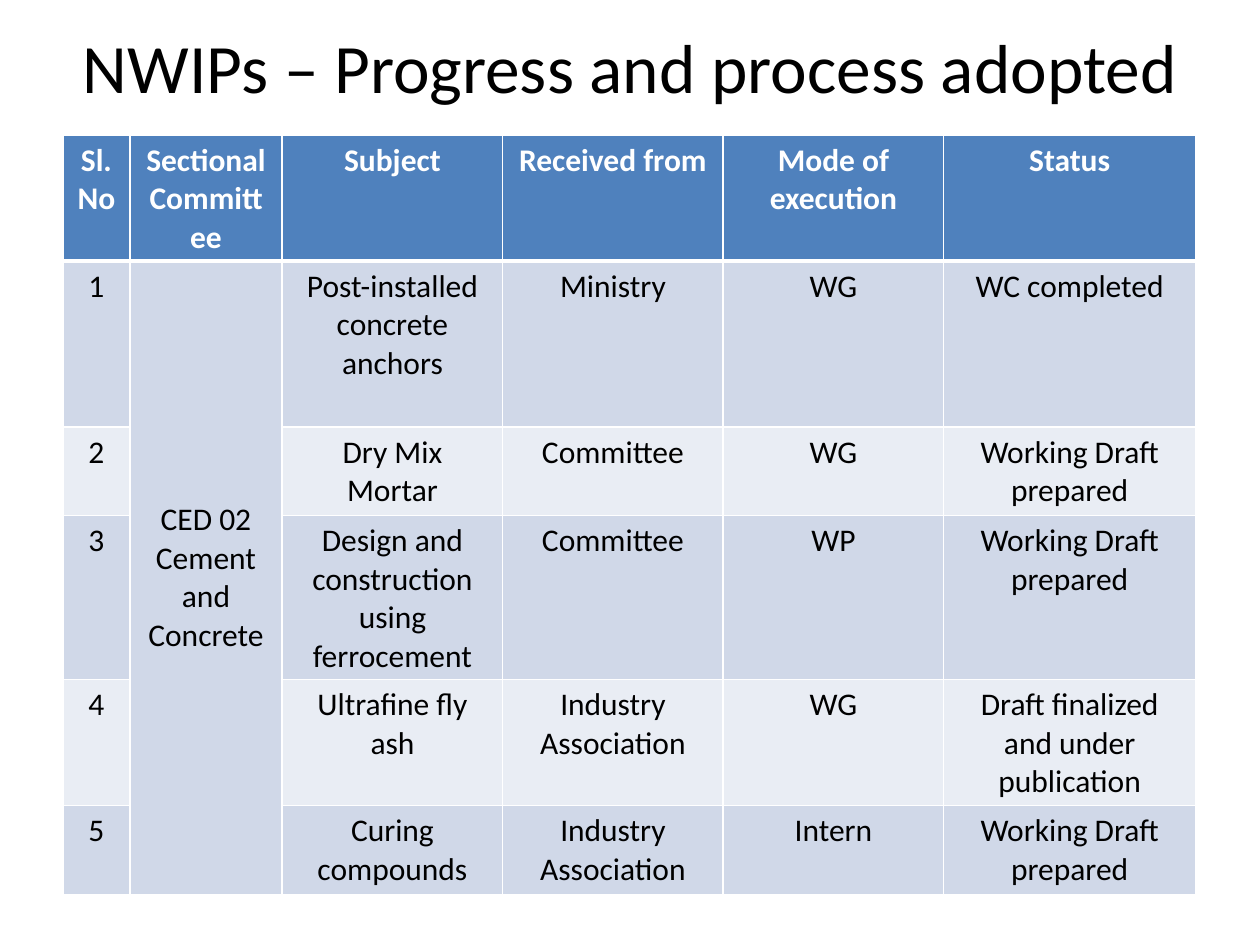
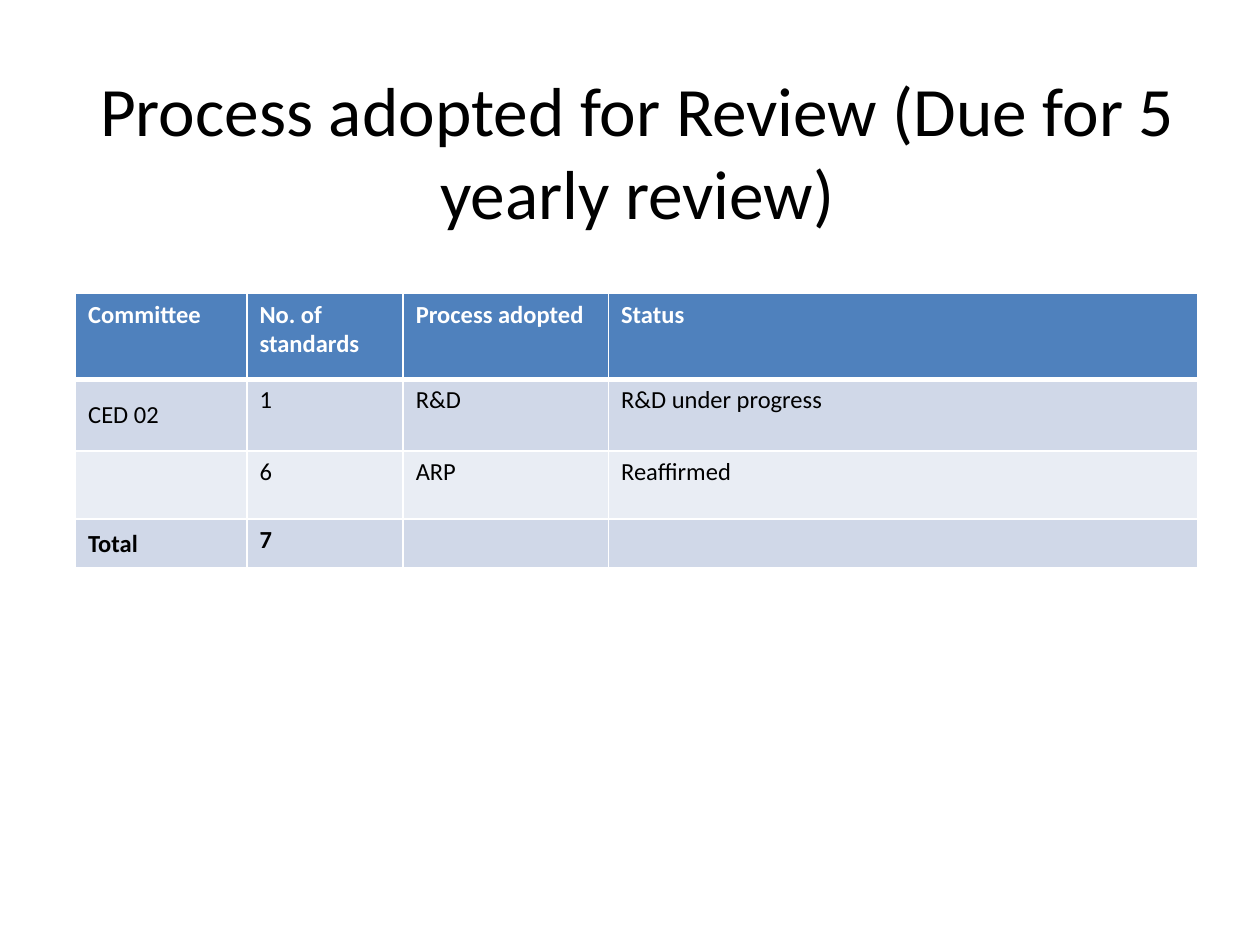
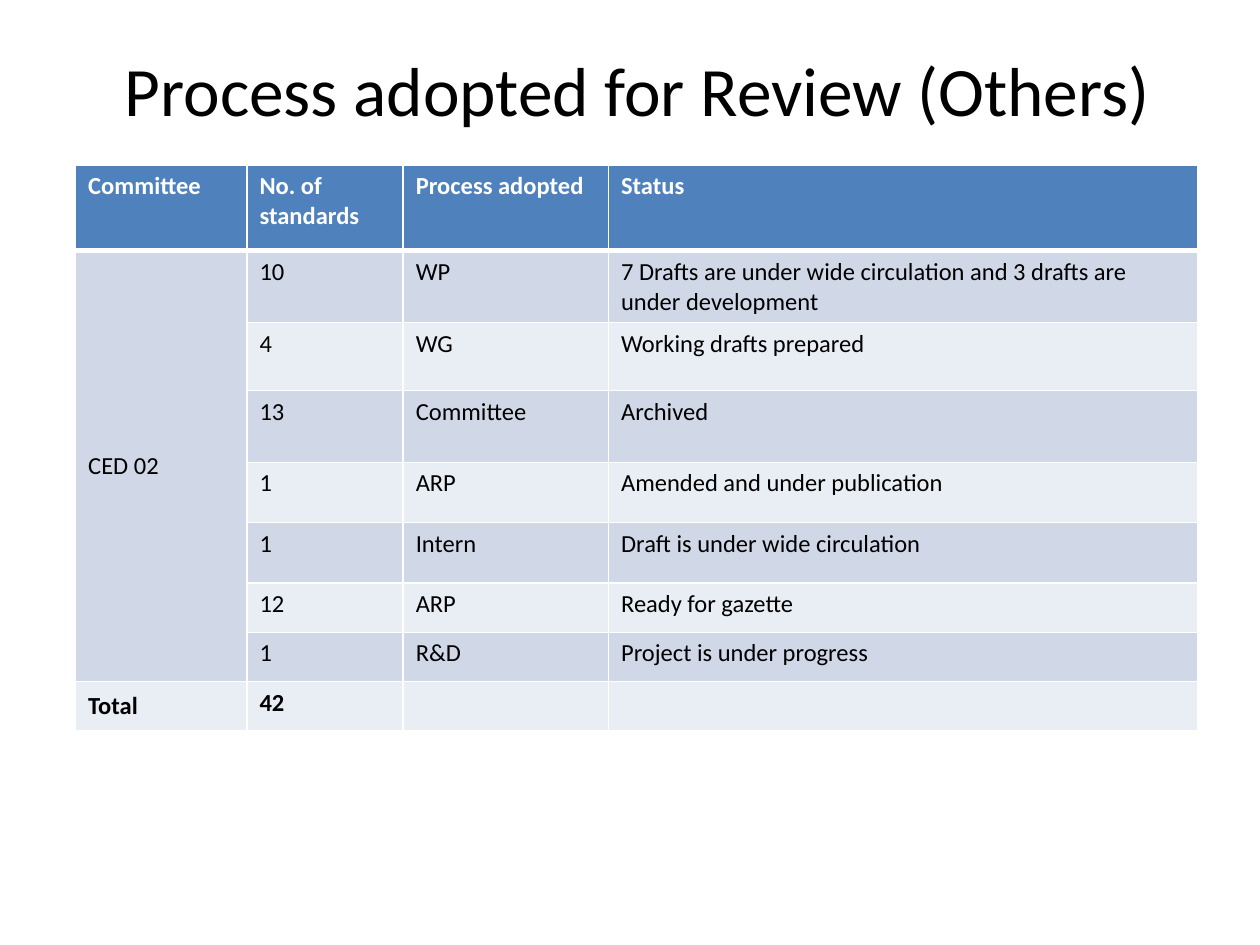
import pptx
import pptx.dml.color
import pptx.enum.text
import pptx.oxml.ns
import pptx.util
from lxml import etree

Inches, Pt = pptx.util.Inches, pptx.util.Pt
RGBColor = pptx.dml.color.RGBColor
PP_ALIGN, MSO_ANCHOR = pptx.enum.text.PP_ALIGN, pptx.enum.text.MSO_ANCHOR
qn = pptx.oxml.ns.qn

BLACK = RGBColor(0x00, 0x00, 0x00)
WHITE = RGBColor(0xFF, 0xFF, 0xFF)
HEADER_BLUE = RGBColor(0x4F, 0x81, 0xBD)
BAND_DARK = RGBColor(0xD0, 0xD8, 0xE8)
BAND_LIGHT = RGBColor(0xE9, 0xED, 0xF4)

REVIEW_HEADER = ["Committee", "No. of standards", "Process adopted", "Status"]
REVIEW_COLS = [1.36, 1.24, 1.63, 4.68]

# None marks a cell merged into the one above it.
NWIP_ROWS = [
    ["Sl. No", "Sectional Committee", "Subject", "Received from", "Mode of execution", "Status"],
    ["1", "CED 02\nCement and Concrete", "Post-installed concrete anchors", "Ministry", "WG",
     "WC completed"],
    ["2", None, "Dry Mix Mortar", "Committee", "WG", "Working Draft prepared"],
    ["3", None, "Design and construction using ferrocement", "Committee", "WP",
     "Working Draft prepared"],
    ["4", None, "Ultrafine fly ash", "Industry Association", "WG",
     "Draft finalized and under publication"],
    ["5", None, "Curing compounds", "Industry Association", "Intern", "Working Draft prepared"],
]
DUE_ROWS = [
    REVIEW_HEADER,
    ["CED 02", "1", "R&D", "R&D under progress"],
    ["", "6", "ARP", "Reaffirmed"],
    ["Total", "7", "", ""],
]
OTHER_ROWS = [
    REVIEW_HEADER,
    ["CED 02", "10", "WP",
     "7 Drafts are under wide circulation and 3 drafts are under development"],
    [None, "4", "WG", "Working drafts prepared"],
    [None, "13", "Committee", "Archived"],
    [None, "1", "ARP", "Amended and under publication"],
    [None, "1", "Intern", "Draft is under wide circulation"],
    [None, "12", "ARP", "Ready for gazette"],
    [None, "1", "R&D", "Project is under progress"],
    ["Total", "42", "", ""],
]


class Deck:
    font = "Calibri"
    title_size = 39.6

    def __init__(self):
        self.prs = pptx.Presentation()
        self.prs.slide_width, self.prs.slide_height = Inches(10), Inches(7.5)
        self.slide = None

    def new_slide(self):
        self.slide = self.prs.slides.add_slide(self.prs.slide_layouts[6])

    def add_text(self, tf, text, size, color=BLACK, bold=False, align=PP_ALIGN.LEFT):
        """Fill a text frame, one paragraph per line of text."""
        for i, line in enumerate(text.split("\n")):
            p = tf.add_paragraph() if i else tf.paragraphs[0]
            p.alignment = align
            if not line:
                etree.SubElement(p._p, qn("a:endParaRPr"), sz=str(size * 100))
                continue
            r = p.add_run()
            r.text = line
            r.font.name, r.font.size, r.font.bold = self.font, Pt(size), bold
            r.font.color.rgb = color

    def title(self, text, left, top, height):
        sp = self.slide.shapes.add_textbox(Inches(left), Inches(top), Inches(9), Inches(height))
        tf = sp.text_frame
        tf.word_wrap = True
        tf.vertical_anchor = MSO_ANCHOR.MIDDLE
        self.add_text(tf, text, self.title_size, align=PP_ALIGN.CENTER)

    def borders(self, cell, **widths):
        """Draw white cell borders; keys are L, R, T, B and widths are points."""
        tc_pr = cell._tc.get_or_add_tcPr()
        for side, width in widths.items():
            ln = etree.SubElement(tc_pr, qn(f"a:ln{side}"), w=str(Pt(width)))
            fill = etree.SubElement(ln, qn("a:solidFill"))
            etree.SubElement(fill, qn("a:srgbClr"), val=str(WHITE))

    def table(self, rows, left, top, cols, heights, size, align=PP_ALIGN.LEFT,
              label_col=0, has_total=False):
        """Add a banded table whose label column is centred vertically."""
        frame = self.slide.shapes.add_table(
            len(rows), len(cols), Inches(left), Inches(top),
            Inches(sum(cols)), Inches(sum(heights)))
        table = frame.table
        for column, width in zip(table.columns, cols):
            column.width = Inches(width)
        for row, height in zip(table.rows, heights):
            row.height = Inches(height)
        for i, texts in enumerate(rows):
            header = i == 0
            fill = HEADER_BLUE if header else BAND_DARK if i % 2 else BAND_LIGHT
            bold = header or (has_total and i == len(rows) - 1)
            for j, text in enumerate(texts):
                cell = table.cell(i, j)
                self.borders(cell, L=1, R=1, T=3 if i == 1 else 1, B=3 if header else 1)
                cell.fill.solid()
                cell.fill.fore_color.rgb = fill
                if j == label_col and not header:
                    cell.vertical_anchor = MSO_ANCHOR.MIDDLE
                self.add_text(cell.text_frame, text or "", size,
                              WHITE if header else BLACK, bold, align)
        merged = [i for i, texts in enumerate(rows) if texts[label_col] is None]
        if merged:
            table.cell(merged[0] - 1, label_col).merge(table.cell(merged[-1], label_col))

    def review_slide(self, title, title_top, title_height, rows, top, heights):
        self.new_slide()
        self.title(title, 0.56, title_top, title_height)
        self.table(rows, 0.6, top, REVIEW_COLS, heights, 14, has_total=True)


def main():
    deck = Deck()
    deck.new_slide()
    deck.title("NWIPs – Progress and process adopted", 0.5, 0.29, 0.47)
    deck.table(NWIP_ROWS, 0.5, 1.07, [0.53, 1.21, 1.75, 1.75, 1.75, 2],
               [0.74, 1.32, 0.7, 1, 0.71, 0.71], 18, PP_ALIGN.CENTER, label_col=1)
    deck.review_slide("Process adopted for Review (Due for 5 yearly review)", 0.52, 1.34,
                      DUE_ROWS, 2.33, [0.68, 0.57, 0.54, 0.39])
    deck.review_slide("Process adopted for Review (Others)", 0.36, 0.69, OTHER_ROWS, 1.31,
                      [0.68, 0.57, 0.54, 0.57, 0.48, 0.48, 0.39, 0.39, 0.39])
    deck.prs.save("out.pptx")


if __name__ == "__main__":
    main()
